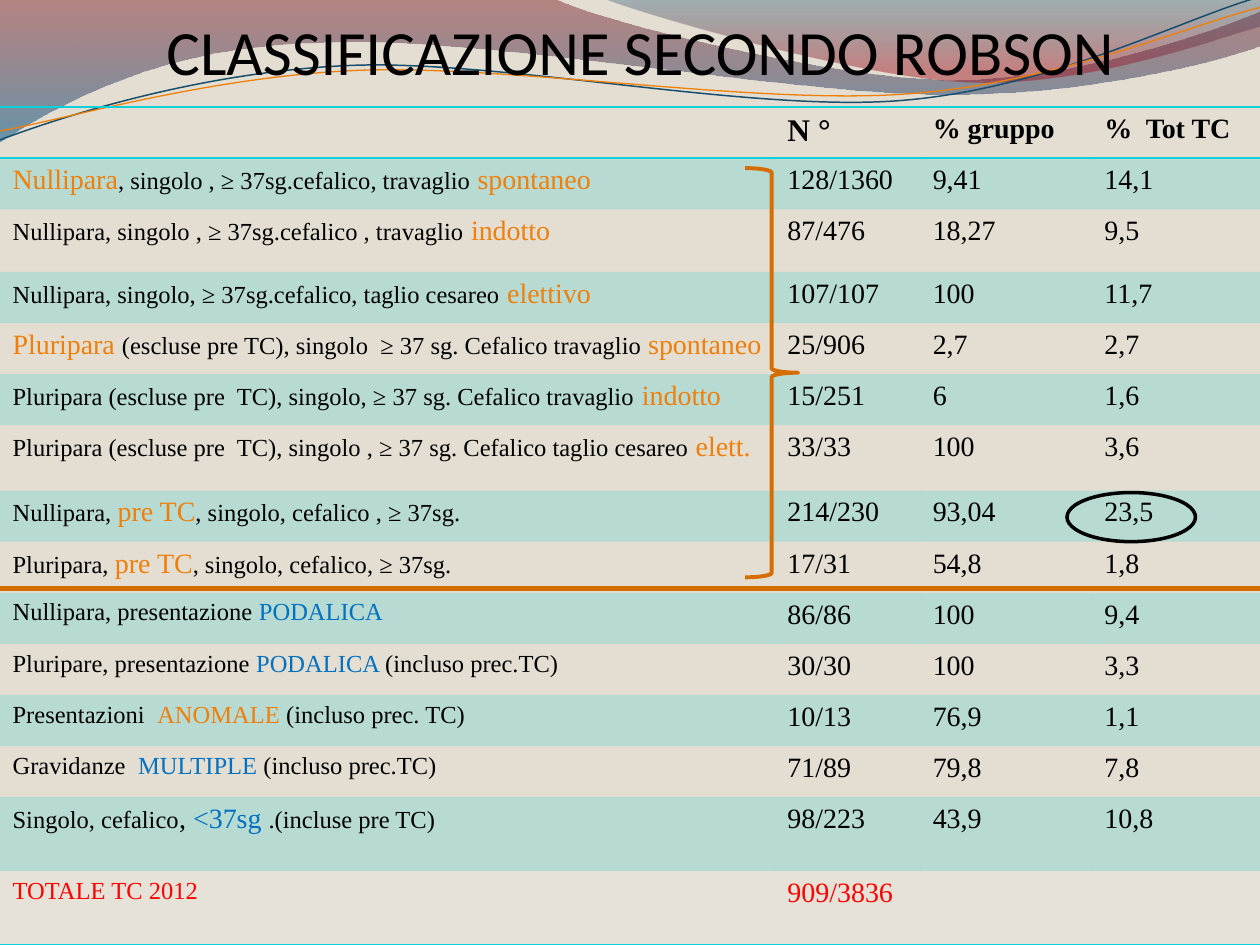
from math import cos, radians, sin

from lxml.etree import SubElement
from pptx import Presentation
from pptx.dml.color import RGBColor as RGB
from pptx.enum.shapes import MSO_CONNECTOR as LINE, MSO_SHAPE as SHAPE
from pptx.enum.text import PP_ALIGN as ALIGN
from pptx.oxml import parse_xml
from pptx.oxml.ns import nsdecls, qn
from pptx.util import Cm, Pt

HUES = {
    "sand": "E3DED1", "black": "000000", "orange": "F07F09", "blue": "0070C0",
    "red": "FF0000", "teal": "0BD0D9", "pale": "F2F2F2", "rust": "D56D00",
    "wine": "7E1621", "sea": "005689", "deep": "094467", "ruby": "A10F1F",
    "navy": "184E6D",
}
SERIF = "Times New Roman"
# Text style: size, colour, bold
STYLES = {
    "head": (18, "black", True), "sub": (16, "black", True),
    "k": (14, "black", False), "K": (16, "black", False),
    "o": (14, "orange", False), "O": (16, "orange", False),
    "b": (14, "blue", False), "B": (16, "blue", False),
    "r": (14, "red", False), "R": (16, "red", False),
}

HEAD = [("N °", "head"), ("% gruppo", "sub"), ("%  Tot TC", "sub")]
GROUPS = [
    ([("Nullipara", "O"), (", singolo , ≥ 37sg.cefalico, travaglio", "k"),
      (" spontaneo", "O")], "128/1360", "9,41", "14,1"),
    ([("Nullipara, singolo , ≥ 37sg.cefalico , travaglio", "k"),
      (" indotto", "O")], "87/476", "18,27", "9,5"),
    ([("Nullipara, singolo, ≥ 37sg.cefalico, taglio cesareo", "k"),
      (" elettivo", "O")], "107/107", "100", "11,7"),
    ([("Pluripara ", "O"),
      ("(escluse pre TC), singolo  ≥ 37 sg. Cefalico travaglio ", "k"),
      ("spontaneo", "O")], "25/906", "2,7", "2,7"),
    ([("Pluripara (escluse pre  TC), singolo, ≥ 37 sg. Cefalico travaglio", "k"),
      (" indotto", "O")], "15/251", "6", "1,6"),
    ([("Pluripara (escluse pre  TC), singolo , ≥ 37 sg. Cefalico taglio cesareo ", "k"),
      ("elett.", "O")], "33/33", "100", "3,6"),
    ([("Nullipara, ", "k"), ("pre TC", "O"),
      (", singolo, cefalico , ≥ 37sg.", "k")], "214/230", "93,04", "23,5"),
    ([("Pluripara, ", "k"), ("pre TC", "O"),
      (", singolo, cefalico, ≥ 37sg.", "k")], "17/31", "54,8", "1,8"),
    ([("Nullipara, presentazione ", "k"), ("PODALICA", "b")], "86/86", "100", "9,4"),
    ([("Pluripare, presentazione", "k"), (" PODALICA ", "b"),
      ("(incluso prec.TC)", "k")], "30/30", "100", "3,3"),
    ([("Presentazioni  ", "k"), ("ANOMALE", "o"),
      (" (incluso prec. TC)", "k")], "10/13", "76,9", "1,1"),
    ([("Gravidanze  ", "k"), ("MULTIPLE", "b"),
      (" (incluso prec.TC)", "k")], "71/89", "79,8", "7,8"),
    ([("Singolo, cefalico", "k"), (", ", "K"), ("<37sg ", "B"),
      (".(incluse pre TC)", "k")], "98/223", "43,9", "10,8"),
]
TOTAL = [[("TOTALE TC 2012", "r")], [("909/3836", "R")], [], []]

COLS = [15.62, 2.93, 3.46, 3.39]
ROW = 1.03
TALL = {2: 1.26, 6: 1.32, 13: 1.49, 14: 1.48}

# Outlines in cm: a pair is a corner, six numbers are a Bézier curve
BANDS = [
    ([(0, -0.03), (11.18, -0.03), (12.09, 0.43, 16.87, 1.6, 19.25, 1.6),
      (21.67, 1.6, 24.33, 0.66, 25.4, 0.23), (25.43, 0.91),
      (24.97, 1.12, 22.1, 1.93, 18.95, 1.9), (15.8, 1.9, 9.7, 0.71, 6.53, 0.86),
      (3.28, 0.89, 1.17, 2.11, -0.03, 2.87)],
     [(0, "wine", 45), (1, "sea", 55)]),
    ([(12.17, -0.03), (12.93, 0.28, 17.32, 1.57, 19.53, 1.65),
      (21.82, 1.75, 24.41, 0.81, 25.4, 0.53), (25.4, 0)],
     [(0, "deep", 30), (0.8, "ruby", 45)]),
]
TILT = -2.7
WAVES = [
    ([(0, 2.82), (1.22, 2.36, 4.01, 1.45, 7.04, 1.32),
      (10.03, 1.19, 15.06, 2.26, 18.11, 2.03),
      (21.16, 1.8, 23.83, 0.38, 25.35, -0.05)], "navy", 0.85, (12.67, 1.46)),
    ([(0, 2.64), (1.19, 2.44, 4.17, 1.55, 7.19, 1.42),
      (10.24, 1.3, 15.16, 2.11, 18.21, 1.9),
      (21.23, 1.7, 23.9, 0.53, 25.4, 0.15)], "orange", 0.75, (12.69, 1.5)),
]
MARKS = [
    (SHAPE.RIGHT_BRACE, (15.02, 3.39, 1.07, 8.25), "rust", 2.25),
    (SHAPE.OVAL, (21.51, 9.93, 2.59, 0.99), "black", 2),
]


def hue(name):
    return RGB.from_string(HUES[name])


def stroke(shape, name, width):
    shape.line.color.rgb = hue(name)
    shape.line.width = Pt(width)


def fade(node, rates):
    """Set the opacity, in percent, of each colour below node."""
    for clr, rate in zip(list(node.iter(qn("a:srgbClr"))), rates):
        SubElement(clr, qn("a:alpha"), val=str(rate * 1000))


def turn(steps, angle, mid):
    """Rotate every point of an outline about mid."""
    c, s = cos(radians(angle)), sin(radians(angle))
    res = []
    for step in steps:
        offs = [(x - mid[0], y - mid[1]) for x, y in zip(step[::2], step[1::2])]
        res.append(tuple(v for x, y in offs
                         for v in (mid[0] + x * c - y * s, mid[1] + x * s + y * c)))
    return res


def outline(shapes, steps, close):
    """Draw a freeform, then join each three control points into a curve."""
    pts = [(Cm(x), Cm(y)) for step in steps for x, y in zip(step[::2], step[1::2])]
    pen = shapes.build_freeform(*pts[0], scale=1.0)
    pen.add_line_segments(pts[1:], close=close)
    shape = pen.convert_to_shape()
    shape.shadow.inherit = False
    legs = iter(list(shape._element.iter(qn("a:lnTo"))))
    for step in steps[1:]:
        leg = next(legs)
        if len(step) == 6:
            leg.tag = qn("a:cubicBezTo")
            for _ in range(2):
                extra = next(legs)
                leg.append(extra[0])
                extra.getparent().remove(extra)
    return shape


def write(par, text, size, name, bold=False, face=SERIF):
    run = par.add_run()
    run.text = text
    font = run.font
    font.name, font.size, font.bold = face, Pt(size), bold
    font.color.rgb = hue(name)


def paint(cell, name):
    if name:
        cell.fill.solid()
        cell.fill.fore_color.rgb = hue(name)
        fade(cell._tc.tcPr, [20])
    else:
        cell.fill.background()


def rule(cell, sides):
    """Draw thin teal borders on the given sides and none elsewhere."""
    ink = f'<a:solidFill><a:srgbClr val="{HUES["teal"]}"/></a:solidFill>'
    for i, side in enumerate("LRTB"):
        cell._tc.tcPr.insert(i, parse_xml(
            f'<a:ln{side} {nsdecls("a")} w="12700">'
            f'{ink if side in sides else "<a:noFill/>"}</a:ln{side}>'))


def fill_table(shapes):
    rows = [[[]] + [[cell] for cell in HEAD]]
    rows += [[label] + [[(v, "K")] for v in vals] for label, *vals in GROUPS]
    rows.append(TOTAL)
    last = len(rows) - 1
    highs = [TALL.get(i, ROW) for i in range(len(rows))]
    table = shapes.add_table(len(rows), len(COLS), 0, Cm(2.16),
                             Cm(sum(COLS)), Cm(sum(highs))).table
    table.first_row = table.horz_banding = False
    # The "No Style, No Grid" table style
    table._tbl.tblPr.find(qn("a:tableStyleId")).text = "{2D5ABB26-0587-4C30-8999-92F81FD0307C}"
    for col, wide in zip(table.columns, COLS):
        col.width = Cm(wide)
    edges = {0: "TB", 1: "T", last: "B"}
    for i, row in enumerate(rows):
        table.rows[i].height = Cm(highs[i])
        tint = "pale" if i == last else "teal" if i % 2 else None
        for j, runs in enumerate(row):
            cell = table.cell(i, j)
            paint(cell, tint)
            rule(cell, edges.get(i, ""))
            for text, style in runs:
                write(cell.text_frame.paragraphs[0], text, *STYLES[style])


def main():
    prs = Presentation()
    prs.slide_width, prs.slide_height = Cm(25.4), Cm(19.05)
    slide = prs.slides.add_slide(prs.slide_layouts[6])
    slide.background.fill.solid()
    slide.background.fill.fore_color.rgb = hue("sand")
    shapes = slide.shapes

    for steps, stops in BANDS:
        band = outline(shapes, steps, True)
        band.line.fill.background()
        band.fill.gradient()
        band.fill.gradient_angle = 270
        for stop, (place, name, _) in zip(band.fill.gradient_stops, stops):
            stop.position = place
            stop.color.rgb = hue(name)
        fade(band._element.spPr, [rate for *_, rate in stops])
    for steps, name, width, mid in WAVES:
        wave = outline(shapes, turn(steps, -TILT, mid), False)
        wave.rotation = TILT
        wave.fill.background()
        stroke(wave, name, width)

    fill_table(shapes)

    title = shapes.add_textbox(Cm(1.9), Cm(0.13), Cm(22.02), Cm(1.8)).text_frame
    title.word_wrap = True
    title.paragraphs[0].alignment = ALIGN.CENTER
    write(title.paragraphs[0], "CLASSIFICAZIONE SECONDO ROBSON", 36, "black", face="Calibri")

    split = shapes.add_connector(LINE.STRAIGHT, 0, Cm(11.86), Cm(25.4), Cm(11.86))
    stroke(split, "rust", 3)
    SubElement(split._element.spPr, qn("a:effectLst"))
    for kind, box, name, width in MARKS:
        mark = shapes.add_shape(kind, *map(Cm, box))
        mark.shadow.inherit = False
        mark.fill.background()
        stroke(mark, name, width)

    prs.save("out.pptx")


if __name__ == "__main__":
    main()
